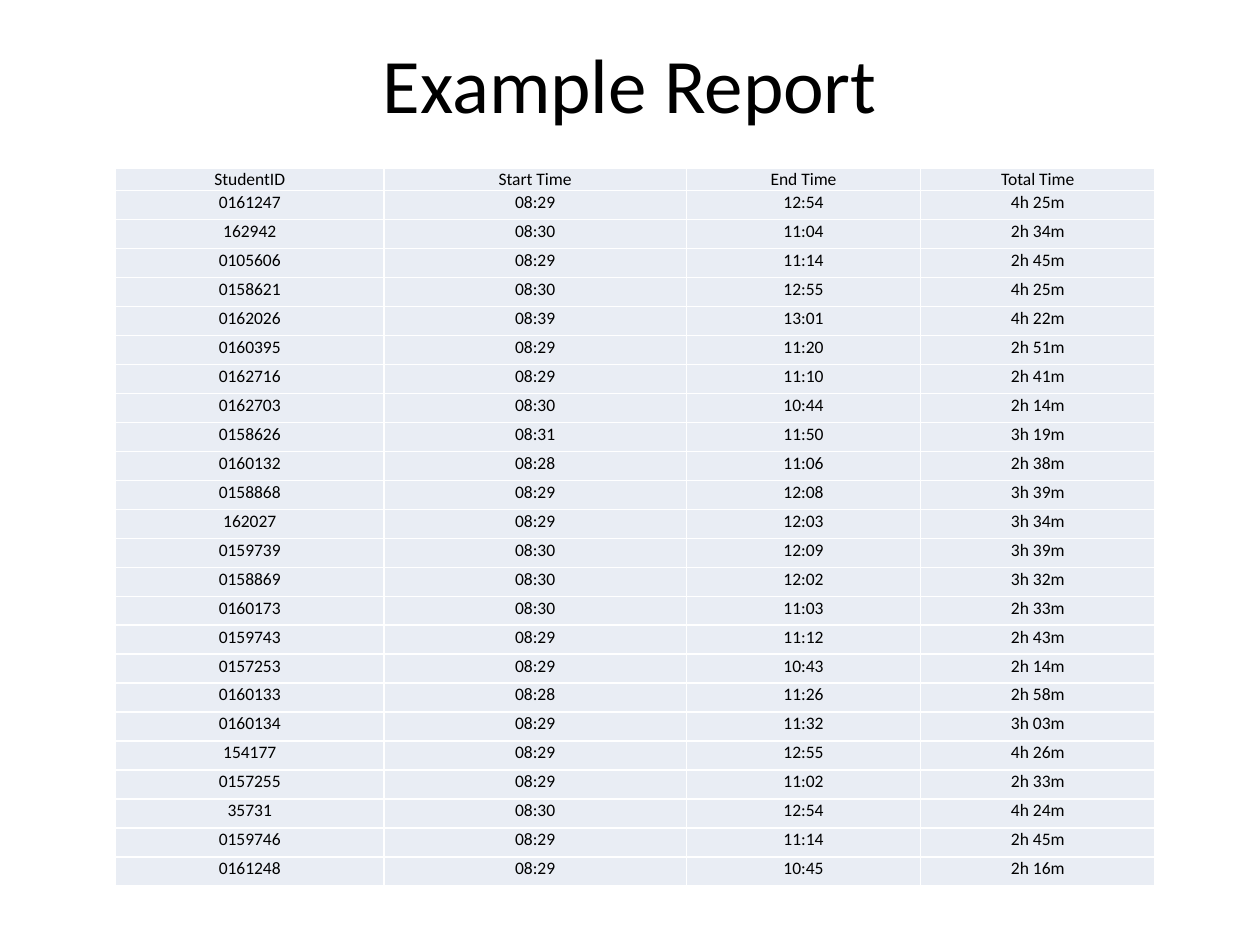
from lxml.etree import SubElement
from pptx import Presentation
from pptx.dml.color import RGBColor
from pptx.enum.text import MSO_ANCHOR, PP_ALIGN
from pptx.oxml.ns import qn
from pptx.util import Pt

HEAD = ("StudentID", "Start Time", "End Time", "Total Time")
ROWS = (
    ("0161247", "08:29", "12:54", "4h 25m"),
    ("162942", "08:30", "11:04", "2h 34m"),
    ("0105606", "08:29", "11:14", "2h 45m"),
    ("0158621", "08:30", "12:55", "4h 25m"),
    ("0162026", "08:39", "13:01", "4h 22m"),
    ("0160395", "08:29", "11:20", "2h 51m"),
    ("0162716", "08:29", "11:10", "2h 41m"),
    ("0162703", "08:30", "10:44", "2h 14m"),
    ("0158626", "08:31", "11:50", "3h 19m"),
    ("0160132", "08:28", "11:06", "2h 38m"),
    ("0158868", "08:29", "12:08", "3h 39m"),
    ("162027", "08:29", "12:03", "3h 34m"),
    ("0159739", "08:30", "12:09", "3h 39m"),
    ("0158869", "08:30", "12:02", "3h 32m"),
    ("0160173", "08:30", "11:03", "2h 33m"),
    ("0159743", "08:29", "11:12", "2h 43m"),
    ("0157253", "08:29", "10:43", "2h 14m"),
    ("0160133", "08:28", "11:26", "2h 58m"),
    ("0160134", "08:29", "11:32", "3h 03m"),
    ("154177", "08:29", "12:55", "4h 26m"),
    ("0157255", "08:29", "11:02", "2h 33m"),
    ("35731", "08:30", "12:54", "4h 24m"),
    ("0159746", "08:29", "11:14", "2h 45m"),
    ("0161248", "08:29", "10:45", "2h 16m"),
)
WIDTHS = (153.4, 172.8, 133.9, 133.9)
HEIGHTS = (12.96,) + (16.56,) * len(ROWS)


class Report:
    """Hold the report style and the slide being filled."""

    font = "Calibri"
    hues = {"ink": "000000", "cell": "E9EDF4", "rule": "FFFFFF"}
    plain = {"first_row": False, "horz_banding": False}
    inset = {
        "margin_left": Pt(0.72),
        "margin_right": Pt(0.72),
        "margin_top": Pt(0.72),
        "margin_bottom": 0,
        "vertical_anchor": MSO_ANCHOR.TOP,
    }

    def __init__(self, deck):
        self.slide = deck.slides.add_slide(deck.slide_layouts[5])

    def apply(self, item, form):
        for name, value in form.items():
            setattr(item, name, value)

    def hue(self, name):
        return RGBColor.from_string(self.hues[name])

    def label(self, frame, text, size):
        line = frame.paragraphs[0]
        line.alignment = PP_ALIGN.CENTER
        run = line.add_run()
        run.text = text
        self.apply(run.font, {"name": self.font, "size": Pt(size)})
        run.font.color.rgb = self.hue("ink")

    def title(self, text, left, top, width, height):
        box = self.slide.shapes.title
        place = {"left": left, "top": top, "width": width, "height": height}
        self.apply(box, {name: Pt(value) for name, value in place.items()})
        box.text_frame.vertical_anchor = MSO_ANCHOR.MIDDLE
        self.label(box.text_frame, text, 44)

    def border(self, cell):
        props = cell._tc.get_or_add_tcPr()
        for spot, side in enumerate(("lnL", "lnR", "lnT", "lnB")):
            line = SubElement(props, qn(f"a:{side}"), w=str(Pt(1)))
            fill = SubElement(line, qn("a:solidFill"))
            SubElement(fill, qn("a:srgbClr"), val=self.hues["rule"])
            props.insert(spot, line)

    def cell(self, cell, text):
        self.apply(cell, self.inset)
        cell.fill.solid()
        cell.fill.fore_color.rgb = self.hue("cell")
        self.border(cell)
        self.label(cell.text_frame, text, 10)

    def table(self, data, left, top, widths, heights):
        grid = self.slide.shapes.add_table(
            len(data), len(widths), Pt(left), Pt(top),
            Pt(sum(widths)), Pt(sum(heights)),
        ).table
        self.apply(grid, self.plain)
        for column, width in zip(grid.columns, widths):
            column.width = Pt(width)
        for row, height, texts in zip(grid.rows, heights, data):
            row.height = Pt(height)
            for cell, text in zip(row.cells, texts):
                self.cell(cell, text)


def main():
    deck = Presentation()
    deck.slide_width, deck.slide_height = Pt(720), Pt(540)
    page = Report(deck)
    page.title("Example Report", 36, 2.2, 648, 90)
    page.table((HEAD, *ROWS), 66, 96, WIDTHS, HEIGHTS)
    deck.save("out.pptx")


if __name__ == "__main__":
    main()
